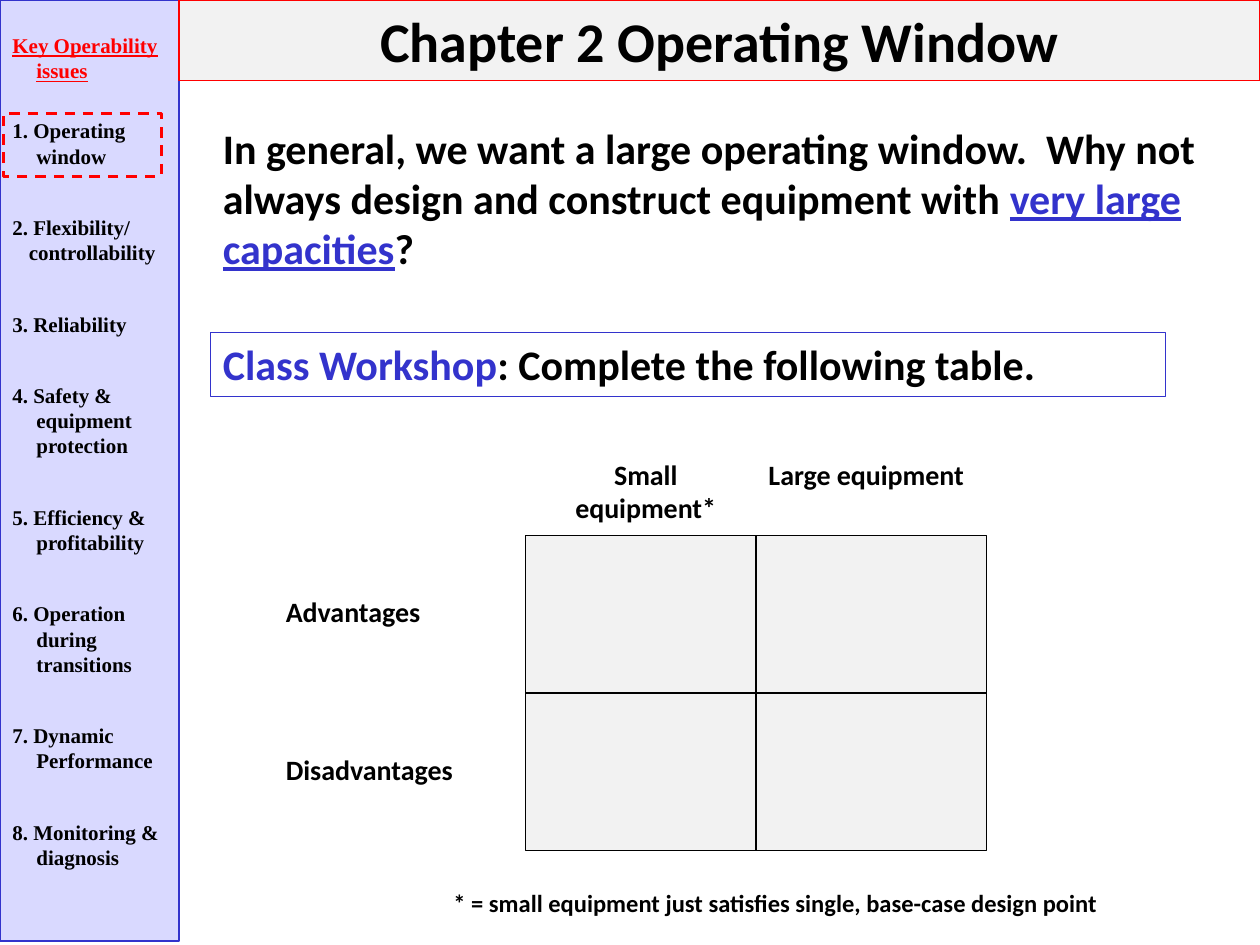
from dataclasses import dataclass

from pptx import Presentation
from pptx import util as u
from pptx.dml import color
from pptx.enum import dml, shapes, text


@dataclass(frozen=True)
class Theme:
    body: str = "Calibri"
    side: str = "Times New Roman"
    black: str = "000000"
    blue: str = "3333CC"
    red: str = "FF0000"
    gray: str = "F2F2F2"
    lavender: str = "D9D9FF"
    title_size: float = 32
    question_size: float = 24
    label_size: float = 16
    note_size: float = 14
    side_size: float = 12
    side_line: float = 14.4
    heading_gap: float = 19.9
    issue_gap: float = 26.4
    thin: float = 0.75
    thick: float = 1.5


THEME = Theme()
LEFT, CENTER = text.PP_ALIGN.LEFT, text.PP_ALIGN.CENTER
ISSUES = (
    "1. Operating window",
    "2. Flexibility/",
    "3. Reliability",
    "4. Safety & equipment protection",
    "5. Efficiency & profitability",
    "6. Operation during transitions",
    "7. Dynamic Performance",
    "8. Monitoring & diagnosis",
)
CONTINUATIONS = {"2. Flexibility/": "controllability"}


def rgb(value):
    return color.RGBColor.from_string(value)


def add_box(page, box, line, fill=None, width=THEME.thin):
    shape = page.shapes.add_shape(
        shapes.MSO_SHAPE.RECTANGLE, *map(u.Inches, box))
    shape.shadow.inherit = False
    if fill:
        shape.fill.solid()
        shape.fill.fore_color.rgb = rgb(fill)
    else:
        shape.fill.background()
    shape.line.color.rgb = rgb(line)
    shape.line.width = u.Pt(width)
    return shape


def add_span(para, words, size, ink=THEME.black, font=THEME.body, underline=False):
    span = para.add_run()
    span.text = words
    span.font.name = font
    span.font.size = u.Pt(size)
    span.font.bold = True
    span.font.underline = underline
    span.font.color.rgb = rgb(ink)


def write(shape, spans, size, align=LEFT):
    frame = shape.text_frame
    frame.word_wrap = True
    frame.vertical_anchor = text.MSO_ANCHOR.TOP
    para = frame.paragraphs[0]
    para.alignment = align
    for words, ink, underline in spans:
        add_span(para, words, size, ink, underline=underline)


def add_text(page, box, spans, size, align=LEFT):
    write(page.shapes.add_textbox(*map(u.Inches, box)), spans, size, align)


def plain(words):
    return [(words, THEME.black, False)]


def add_question(page, box):
    spans = [
        ("In general, we want a large operating window.  Why not always design "
         "and construct equipment with ", THEME.black, False),
        ("very large capacities", THEME.blue, True),
        ("?", THEME.black, False),
    ]
    add_text(page, box, spans, THEME.question_size)


def add_workshop(page, box):
    spans = [
        ("Class Workshop", THEME.blue, False),
        (": Complete the following table.", THEME.black, False),
    ]
    write(add_box(page, box, THEME.blue), spans, THEME.question_size)


def add_comparison(page, box):
    left, top, width, height = box
    columns = ("Small equipment*", "Large equipment")
    rows = ("Advantages", "Disadvantages")
    cell_width, cell_height = width / len(columns), height / len(rows)
    for row, row_label in enumerate(rows):
        cell_top = top + row * cell_height
        for column in range(len(columns)):
            cell = (left + column * cell_width, cell_top, cell_width, cell_height)
            add_box(page, cell, THEME.black, THEME.gray)
        add_text(page, (left - 2, cell_top + 0.42, 1.75, 0.37),
                 plain(row_label), THEME.label_size)
    for column, column_label in enumerate(columns):
        add_text(page, (left + 0.08 + column * 1.75, top - 0.67, 1.75, 0.64),
                 plain(column_label), THEME.label_size, CENTER)


def add_side_para(para, words, gap=0, ink=THEME.black, underline=False,
                  margin=0.19, indent=-0.19):
    para.alignment = LEFT
    para.line_spacing = u.Pt(THEME.side_line)
    para.space_before = u.Pt(gap)
    properties = para._p.get_or_add_pPr()
    properties.set("marL", str(u.Inches(margin)))
    properties.set("indent", str(u.Inches(indent)))
    add_span(para, words, THEME.side_size, ink, THEME.side, underline)


def add_sidebar(page, box):
    left, top, width, height = box
    frame = add_box(page, box, THEME.blue, THEME.lavender).text_frame
    frame.word_wrap = True
    frame.vertical_anchor = text.MSO_ANCHOR.TOP
    frame.margin_top = u.Inches(0.26)
    add_side_para(frame.paragraphs[0], "Key Operability issues",
                  ink=THEME.red, underline=True)
    for index, issue in enumerate(ISSUES):
        gap = THEME.issue_gap if index else THEME.heading_gap
        add_side_para(frame.add_paragraph(), issue, gap)
        if issue in CONTINUATIONS:
            add_side_para(frame.add_paragraph(), CONTINUATIONS[issue],
                          margin=0.13, indent=0)
    marker = add_box(page, (left + 0.03, top + 0.9, 1.25, 0.5),
                     THEME.red, width=THEME.thick)
    marker.line.dash_style = dml.MSO_LINE.DASH


def add_footnote(page, box):
    note = "* = small equipment just satisfies single, base-case design point"
    add_text(page, box, plain(note), THEME.note_size)


def add_title(page, box):
    write(add_box(page, box, THEME.red, THEME.gray),
          plain("Chapter 2 Operating Window"), THEME.title_size, CENTER)


def main():
    deck = Presentation()
    deck.slide_width, deck.slide_height = u.Inches(10), u.Inches(7.5)
    page = deck.slides.add_slide(deck.slide_layouts[6])
    add_question(page, (1.67, 0.92, 7.92, 1.31))
    add_workshop(page, (1.67, 2.64, 7.58, 0.51))
    add_comparison(page, (4.17, 4.25, 3.66, 2.5))
    add_sidebar(page, (0, 0, 1.42, 7.47))
    add_footnote(page, (3.5, 7, 5.42, 0.33))
    add_title(page, (1.42, 0, 8.58, 0.64))
    deck.save("out.pptx")


if __name__ == "__main__":
    main()
